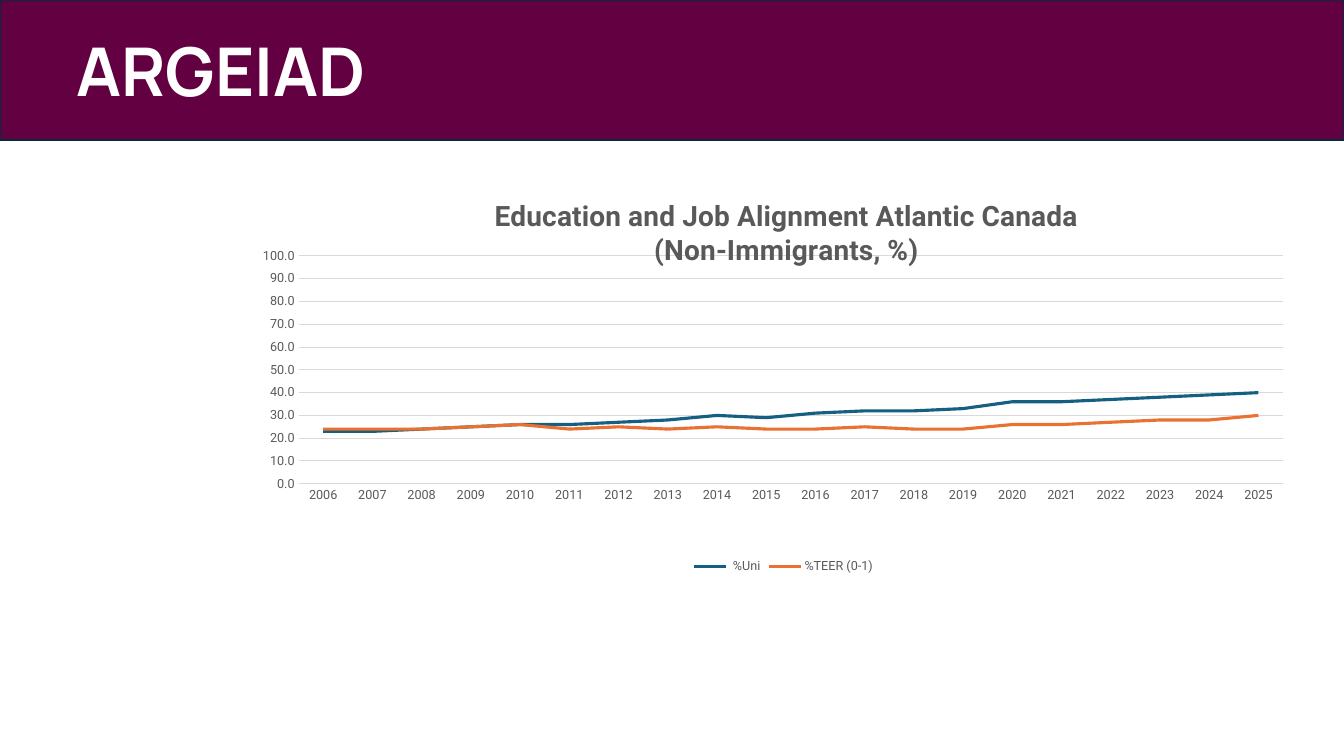
from lxml.etree import SubElement as Sub
from pptx import Presentation
from pptx.chart.data import CategoryChartData as Data
from pptx.dml.color import RGBColor as Rgb
from pptx.enum.chart import XL_CHART_TYPE as Kind, XL_LEGEND_POSITION as Spot
from pptx.enum.chart import XL_TICK_MARK as Tick
from pptx.enum.text import MSO_ANCHOR as Anchor, MSO_AUTO_SIZE as Fit, PP_ALIGN as Align
from pptx.oxml.ns import qn
from pptx.util import Inches, Pt

WIDTH, HEIGHT = Inches(13.33), Inches(7.5)
HUES = {
    "band": "630041", "edge": "092A39", "white": "FFFFFF", "black": "000000",
    "text": "595959", "grid": "D9D9D9", "blue": "156082", "orange": "E97132",
}
YEARS = [str(year) for year in range(2006, 2026)]
LINES = [
    (" %Uni", "blue", [23, 23, 24, 25, 26, 26, 27, 28, 30, 29,
                       31, 32, 32, 33, 36, 36, 37, 38, 39, 40]),
    ("%TEER (0-1)", "orange", [24, 24, 24, 25, 26, 24, 25, 24, 25, 24,
                               24, 25, 24, 24, 26, 26, 27, 28, 28, 30]),
]
HEADING = ["Education and Job Alignment Atlantic Canada", "(Non-Immigrants, %)"]


def style(font, size, hue, face="Roboto", bold=False):
    font.size, font.name, font.bold = Pt(size), face, bold
    font.color.rgb = Rgb.from_string(HUES[hue])


def stroke(line, hue, width):
    line.color.rgb = Rgb.from_string(HUES[hue])
    line.width = Pt(width)


def place(part, before, **shares):
    """Give a chart part a fixed place, in shares of the chart's size."""
    for old in part.findall(qn("c:layout")):
        part.remove(old)
    layout = part.makeelement(qn("c:layout"), {})
    part.find(qn(before)).addprevious(layout)
    manual = Sub(layout, qn("c:manualLayout"))
    if "w" in shares:
        Sub(manual, qn("c:layoutTarget"), val="inner")
    for side in "xy":
        Sub(manual, qn(f"c:{side}Mode"), val="edge")
    for key, share in shares.items():
        Sub(manual, qn(f"c:{key}"), val=str(share))


def add_band(slide, text):
    band = slide.shapes.title
    band.left, band.top, band.width, band.height = 0, 0, WIDTH, int(HEIGHT * 0.185)
    band.fill.solid()
    band.fill.fore_color.rgb = Rgb.from_string(HUES["band"])
    stroke(band.line, "edge", 1.5)
    frame = band.text_frame
    frame.text = text
    frame.auto_size = Fit.NONE
    frame.vertical_anchor = Anchor.MIDDLE
    frame.margin_left = int(WIDTH * 0.057)
    frame.paragraphs[0].alignment = Align.LEFT
    style(frame.paragraphs[0].font, 48, "white", "Manrope", True)


def add_title(chart):
    frame = chart.chart_title.text_frame
    frame.text = "\n".join(HEADING)
    for para in frame.paragraphs:
        style(para.font, 20, "text", bold=True)
    title = chart.chart_title
    title.include_in_layout = False
    place(title._element, "c:overlay", x=0.22, y=0.04)


def set_axes(chart):
    years, rates = chart.category_axis, chart.value_axis
    for axis in (years, rates):
        axis.major_tick_mark = axis.minor_tick_mark = Tick.NONE
        style(axis.tick_labels.font, 9, "text")
    stroke(years.format.line, "grid", 0.75)
    rates.format.line.fill.background()
    rates.minimum_scale, rates.maximum_scale, rates.major_unit = 0, 100, 10
    rates.tick_labels.number_format = "0.0"
    rates.tick_labels.number_format_is_linked = False
    stroke(rates.major_gridlines.format.line, "grid", 0.75)


def add_lines(slide):
    data = Data()
    data.categories = YEARS
    for name, _, rates in LINES:
        data.add_series(name, rates)
    chart = slide.shapes.add_chart(
        Kind.LINE, int(WIDTH * 0.195), int(HEIGHT * 0.237),
        int(WIDTH * 0.776), int(HEIGHT * 0.527), data).chart
    style(chart.font, 10, "black")
    add_title(chart)
    set_axes(chart)
    chart.plots[0].vary_by_categories = False
    for series, (_, hue, _) in zip(chart.plots[0].series, LINES):
        series.smooth = False
        stroke(series.format.line, hue, 2.25)
    chart.has_legend = True
    chart.legend.position = Spot.BOTTOM
    chart.legend.include_in_layout = False
    style(chart.legend.font, 9, "text")
    area = chart._chartSpace.chart.plotArea
    place(area, "c:lineChart", x=0.035, y=0.193, w=0.944, h=0.572)


def main():
    deck = Presentation()
    deck.slide_width, deck.slide_height = WIDTH, HEIGHT
    slide = deck.slides.add_slide(deck.slide_layouts[5])
    add_band(slide, "ARGEIAD")
    add_lines(slide)
    deck.save("out.pptx")


if __name__ == "__main__":
    main()
